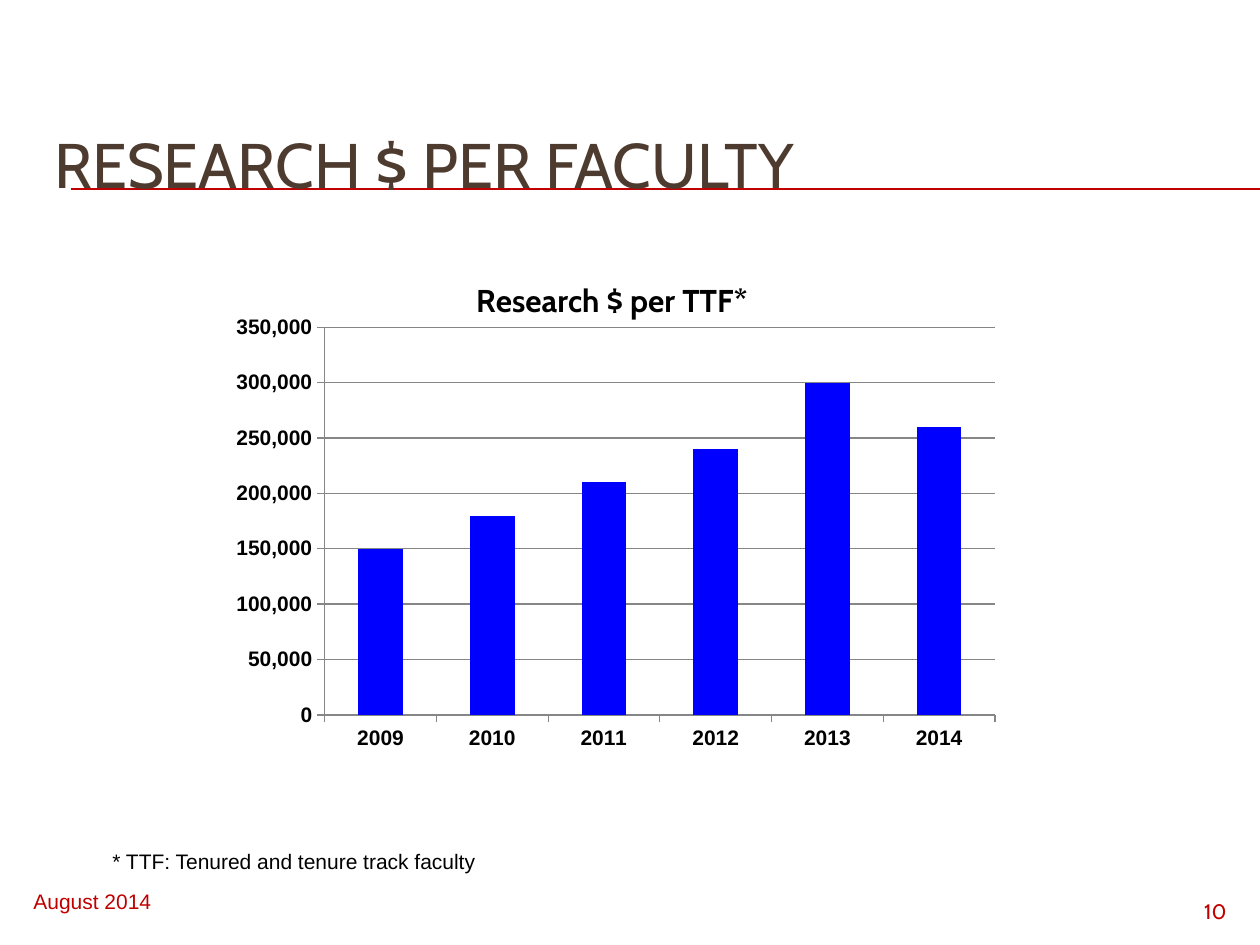
import lxml.etree
import pptx
import pptx.chart.data
import pptx.dml.color
import pptx.enum.chart
import pptx.enum.shapes
import pptx.enum.text
import pptx.oxml
import pptx.oxml.ns
import pptx.util

COLORS = {"red": "C00000", "brown": "4E3B30", "black": "000000", "bar": "0000FF", "axis": "868686"}


def emu(px):
    return pptx.util.Emu(round(px * 914400 / 126))


def style(font, size, face, color, bold=False):
    font.size = pptx.util.Pt(size)
    font.name = face
    font.bold = bold
    font.color.rgb = pptx.dml.color.RGBColor.from_string(COLORS[color])


deck = pptx.Presentation()
deck.slide_width, deck.slide_height = emu(1260), emu(945)
slide = deck.slides.add_slide(deck.slide_layouts[6])

title_rule = slide.shapes.add_connector(
    pptx.enum.shapes.MSO_CONNECTOR.STRAIGHT, emu(71), emu(189), emu(1260), emu(189))
title_rule.line.color.rgb = pptx.dml.color.RGBColor.from_string(COLORS["red"])
title_rule.line.width = pptx.util.Pt(0.75)
lxml.etree.SubElement(title_rule._element.spPr, pptx.oxml.ns.qn("a:effectLst"))

LEFT, RIGHT = pptx.enum.text.PP_ALIGN.LEFT, pptx.enum.text.PP_ALIGN.RIGHT
TOP, MIDDLE = pptx.enum.text.MSO_ANCHOR.TOP, pptx.enum.text.MSO_ANCHOR.MIDDLE
texts = [
    ("RESEARCH $ PER FACULTY", (42, 105, 1197, 116), 36, "Cabin", "brown", LEFT, MIDDLE),
    ("August 2014", (21, 882, 347, 40), 12, "Arial", "red", LEFT, TOP),
    ("10", (1134, 892, 105, 34), 12, "Cabin", "red", RIGHT, TOP),
    ("* TTF: Tenured and tenure track faculty", (100, 842, 1057, 38), 12, "Arial", "black", LEFT, TOP),
]
for wording, place, size, face, color, align, anchor in texts:
    frame = slide.shapes.add_textbox(*map(emu, place)).text_frame
    frame.word_wrap = True
    frame.vertical_anchor = anchor
    frame.text = wording
    frame.paragraphs[0].alignment = align
    style(frame.paragraphs[0].runs[0].font, size, face, color)

research = pptx.chart.data.CategoryChartData(number_format="#,##0")
research.categories = [str(year) for year in range(2009, 2015)]
research.add_series("Series 1", [150000, 180000, 210000, 240000, 300000, 260000])
chart = slide.shapes.add_chart(
    pptx.enum.chart.XL_CHART_TYPE.COLUMN_CLUSTERED,
    emu(213), emu(256), emu(798), emu(510), research).chart
style(chart.font, 10, "Cabin", "black")
chart.has_legend = False
chart.has_title = True
chart.chart_title.text_frame.text = "Research $ per TTF*"
style(chart.chart_title.text_frame.paragraphs[0].runs[0].font, 18, "Cabin", "black", True)
chart.chart_title.include_in_layout = True

years, dollars = chart.category_axis, chart.value_axis
dollars.minimum_scale, dollars.maximum_scale, dollars.major_unit = 0, 350000, 50000
dollars.has_major_gridlines = True
dollars.tick_labels.number_format = "#,##0"
dollars.tick_labels.number_format_is_linked = False
for axis in (years, dollars):
    axis.major_tick_mark = pptx.enum.chart.XL_TICK_MARK.OUTSIDE
    axis.minor_tick_mark = pptx.enum.chart.XL_TICK_MARK.NONE
    style(axis.tick_labels.font, 12, "Arial", "black", True)
for line in (years.format.line, dollars.format.line, dollars.major_gridlines.format.line):
    line.color.rgb = pptx.dml.color.RGBColor.from_string(COLORS["axis"])
    line.width = pptx.util.Pt(0.75)

columns = chart.plots[0]
columns.gap_width = 150
columns.vary_by_categories = False
bars = columns.series[0].format.fill
bars.solid()
bars.fore_color.rgb = pptx.dml.color.RGBColor.from_string(COLORS["bar"])

plot_area = chart._chartSpace.chart.plotArea
for old_layout in plot_area.findall(pptx.oxml.ns.qn("c:layout")):
    plot_area.remove(old_layout)
layout = pptx.oxml.parse_xml(
    f'<c:layout {pptx.oxml.ns.nsdecls("c")}><c:manualLayout><c:layoutTarget val="inner"/>'
    '<c:xMode val="edge"/><c:yMode val="edge"/><c:x val="0.14"/><c:y val="0.14"/>'
    '<c:w val="0.84"/><c:h val="0.76"/></c:manualLayout></c:layout>')
plot_area.insert(0, layout)

deck.save("out.pptx")
